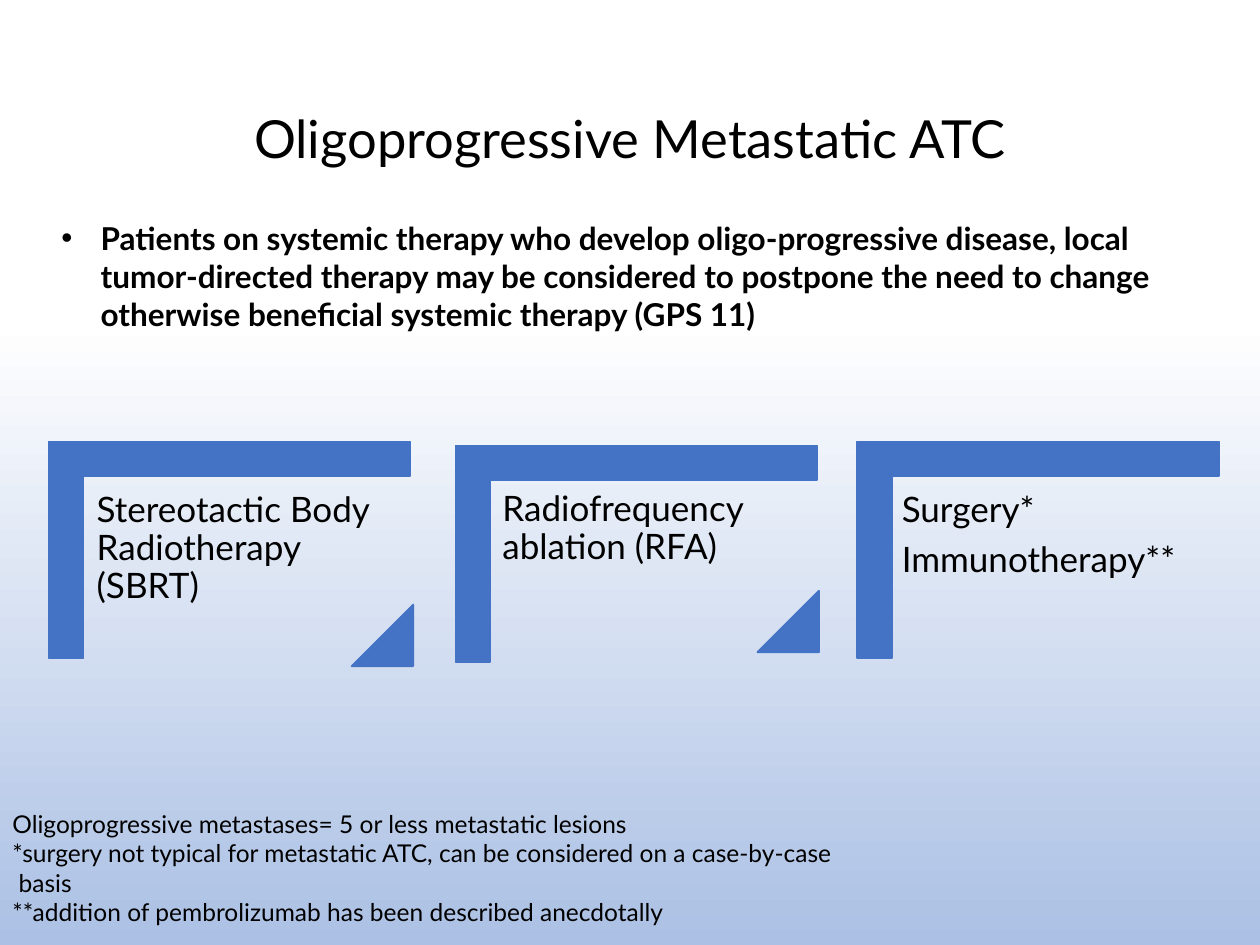
import pptx
import pptx.dml.color
import pptx.enum.shapes
import pptx.enum.text
import pptx.oxml
import pptx.oxml.ns
import pptx.util
from pptx.util import Cm, Pt

COLORS = {"text": "000000", "accent": "4472C4", "sky_top": "FFFFFF", "sky_bottom": "ABC0E4"}
SHAPE = pptx.enum.shapes.MSO_SHAPE
ALIGN = pptx.enum.text.PP_ALIGN
ANCHOR = pptx.enum.text.MSO_ANCHOR


def rgb(name):
    return pptx.dml.color.RGBColor.from_string(COLORS[name])


class SlideBuilder:
    font = "Lato"

    def __init__(self, prs):
        self.s = prs.slides.add_slide(prs.slide_layouts[6])

    def background(self, start):
        """Fade downwards, beginning at the fraction start of the height."""
        fill = self.s.background.fill
        fill.gradient()
        fill.gradient_angle = 270
        for stop, name, position in zip(fill.gradient_stops, ("sky_top", "sky_bottom"), (start, 1)):
            stop.color.rgb = rgb(name)
            stop.position = position

    def text(self, box, lines, size, bold=False, align=ALIGN.LEFT, anchor=ANCHOR.TOP,
             spacing=None, after=0, inset=None, bullet=False):
        tf = self.s.shapes.add_textbox(*map(Cm, box)).text_frame
        tf.word_wrap = True
        tf.vertical_anchor = anchor
        if inset is not None:
            tf.margin_left = tf.margin_right = tf.margin_top = tf.margin_bottom = Cm(inset)
        tf.text = "\n".join(lines)
        for p in tf.paragraphs:
            p.alignment = align
            p.space_after = Pt(after)
            if spacing:
                p.line_spacing = spacing
            if bullet:
                self.bullet(p)
            for r in p.runs:
                r.font.name = self.font
                r.font.size = Pt(size)
                r.font.bold = bold
                r.font.color.rgb = rgb("text")

    def bullet(self, p, indent=0.79):
        pPr = p._p.get_or_add_pPr()
        pPr.set("marL", str(Cm(indent)))
        pPr.set("indent", str(-Cm(indent)))
        ns = pptx.oxml.ns.nsdecls("a")
        pPr.append(pptx.oxml.parse_xml(f'<a:buFont {ns} typeface="Arial"/>'))
        pPr.append(pptx.oxml.parse_xml(f'<a:buChar {ns} char="•"/>'))

    def shape(self, kind, box, adjustments):
        sp = self.s.shapes.add_shape(kind, *map(Cm, box))
        sp.shadow.inherit = False
        sp.fill.solid()
        sp.fill.fore_color.rgb = rgb("accent")
        sp.line.color.rgb = rgb("accent")
        sp.line.width = Pt(1)
        for i, value in enumerate(adjustments):
            sp.adjustments[i] = value
        return sp

    def bracket(self, left, top, width=7.29, height=4.37):
        """Corner turned a quarter; left and top are those seen after turning."""
        shift = (width - height) / 2
        sp = self.shape(SHAPE.CORNER, (left + shift, top - shift, height, width), (0.161, 0.161))
        sp.rotation = 90

    def step_mark(self, left, top, side=1.24):
        self.shape(SHAPE.ISOSCELES_TRIANGLE, (left, top, side, side), (1,))

    def option(self, bracket, text, lines, mark=None):
        self.bracket(*bracket)
        self.text((*text, 6.58, 5.77), lines, 20, spacing=0.9, after=7, inset=0.2)
        if mark:
            self.step_mark(*mark)


def main():
    prs = pptx.Presentation()
    prs.slide_width, prs.slide_height = Cm(25.4), Cm(19.05)
    slide = SlideBuilder(prs)
    slide.background(0.34)
    slide.text((1.75, 1.02, 21.9, 3.68), ["Oligoprogressive Metastatic ATC"], 30,
               align=ALIGN.CENTER, anchor=ANCHOR.MIDDLE, spacing=0.9)

    slide.option((0.98, 8.9), (1.75, 9.73), ["Stereotactic Body Radiotherapy (SBRT)"], (7.09, 12.19))
    slide.option((9.18, 8.98), (9.93, 9.7), ["Radiofrequency ablation (RFA)"], (15.27, 11.91))
    slide.option((17.28, 8.9), (17.98, 9.73), ["Surgery*", "Immunotherapy**"])

    slide.text((0, 16.18, 22.94, 3.43), [
        "Oligoprogressive metastases= 5 or less metastatic lesions",
        "*surgery not typical for metastatic ATC, can be considered on a case-by-case",
        " basis",
        "**addition of pembrolizumab has been described anecdotally",
    ], 14)
    slide.text((0.99, 4.29, 23.72, 2.57), [
        "Patients on systemic therapy who develop oligo-progressive disease, local "
        "tumor-directed therapy may be considered to postpone the need to change "
        "otherwise beneficial systemic therapy (GPS 11)",
    ], 18, bold=True, bullet=True)
    prs.save("out.pptx")


if __name__ == "__main__":
    main()
